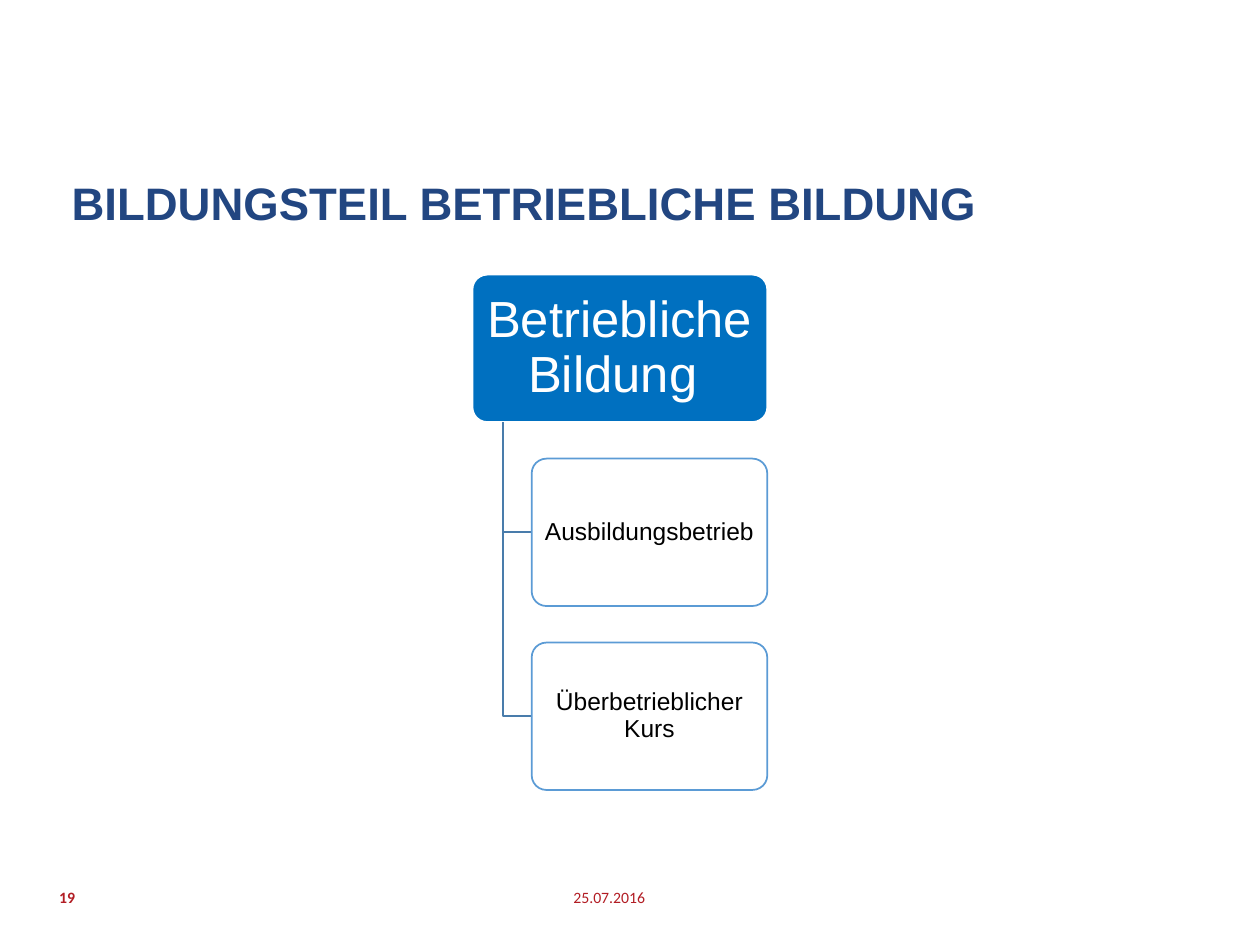
import pptx
import pptx.util
import pptx.dml.color
import pptx.enum.shapes
import pptx.enum.text
import pptx.oxml.ns
import lxml.etree

Inches = pptx.util.Inches
Pt = pptx.util.Pt
ALIGN = pptx.enum.text.PP_ALIGN
ANCHOR = pptx.enum.text.MSO_ANCHOR

COLORS = {
    "title": "224681",
    "foot": "B21D24",
    "root": "0070C0",
    "white": "FFFFFF",
    "black": "000000",
    "edge": "5B9BD5",
    "link": "497CAB",
}

# Tree layout in inches
LEFT, TOP = 3.75, 2.18
ROOT_W, CHILD_W, BOX_H = 2.34, 1.87, 1.17
STEP = 1.46
STEM = 3.99
CHILD_X = 4.22


def color(name):
    return pptx.dml.color.RGBColor.from_string(COLORS[name])


def write(shape, text, size, tone, align, anchor, inset, font="Arial",
          bold=False, space=1.0):
    frame = shape.text_frame
    frame.word_wrap = True
    frame.vertical_anchor = anchor
    frame.margin_left = frame.margin_right = Inches(inset[0])
    frame.margin_top = frame.margin_bottom = Inches(inset[1])
    par = frame.paragraphs[0]
    par.text = text
    par.alignment = align
    par.line_spacing = space
    par.font.name = font
    par.font.size = Pt(size)
    par.font.bold = bold
    par.font.color.rgb = color(tone)


def add_text(slide, box, *args, **style):
    shape = slide.shapes.add_textbox(*map(Inches, box))
    write(shape, *args, **style)


def add_foot(slide, left, text, align, bold=False):
    add_text(slide, (left, 6.92, 2.25, 0.4), text, 9, "foot", align,
             ANCHOR.MIDDLE, (0, 0), font="Calibri", bold=bold)


def add_box(slide, left, top, width, text, size, fill, edge, tone, inset,
            alpha=None):
    shape = slide.shapes.add_shape(
        pptx.enum.shapes.MSO_SHAPE.ROUNDED_RECTANGLE,
        Inches(left), Inches(top), Inches(width), Inches(BOX_H))
    shape.adjustments[0] = 0.1
    shape.shadow.inherit = False
    shape.fill.solid()
    shape.fill.fore_color.rgb = color(fill)
    if alpha:
        qn = pptx.oxml.ns.qn
        tint = shape.fill._xPr.find(qn("a:solidFill")).find(qn("a:srgbClr"))
        lxml.etree.SubElement(tint, qn("a:alpha")).set("val", str(alpha * 1000))
    shape.line.color.rgb = color(edge)
    shape.line.width = Pt(1)
    write(shape, text, size, tone, ALIGN.CENTER, ANCHOR.MIDDLE, inset,
          space=0.9)


def add_link(slide, top, end):
    path = slide.shapes.build_freeform(Inches(STEM), Inches(top))
    path.add_line_segments([(Inches(STEM), Inches(end)),
                            (Inches(CHILD_X), Inches(end))], close=False)
    shape = path.convert_to_shape()
    shape.shadow.inherit = False
    shape.fill.background()
    shape.line.color.rgb = color("link")
    shape.line.width = Pt(1)


def main():
    deck = pptx.Presentation()
    deck.slide_width, deck.slide_height = Inches(10), Inches(7.5)
    slide = deck.slides.add_slide(deck.slide_layouts[6])

    # Title
    add_text(slide, (0.47, 1.39, 7.64, 0.94),
             "BILDUNGSTEIL BETRIEBLICHE BILDUNG", 26, "title", ALIGN.LEFT,
             ANCHOR.TOP, (0.1, 0.05), bold=True, space=0.9)

    # Tree: root, then each child with its link
    add_box(slide, LEFT, TOP, ROOT_W, "Betriebliche Bildung ", 29,
            "root", "white", "white", (0.05, 0.04))
    parts = ["Ausbildungsbetrieb", "Überbetrieblicher Kurs"]
    for row, text in enumerate(parts, 1):
        top = TOP + row * STEP
        add_link(slide, TOP + BOX_H, top + BOX_H / 2)
        add_box(slide, CHILD_X, top, CHILD_W, text, 14,
                "white", "edge", "black", (0.03, 0.02), alpha=90)

    # Footer
    add_foot(slide, 2.87, "25.07.2016", ALIGN.RIGHT)
    add_foot(slide, 0.47, "19", ALIGN.LEFT, bold=True)

    deck.save("out.pptx")


if __name__ == "__main__":
    main()
